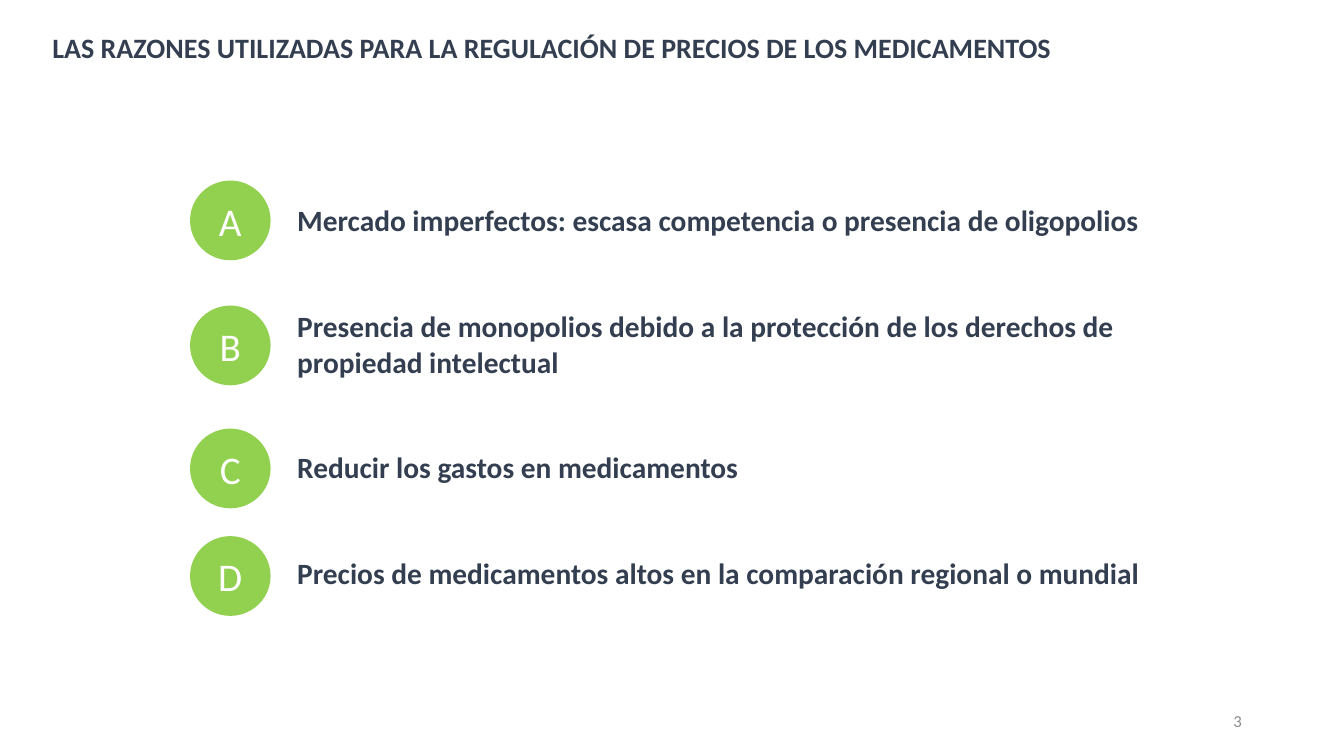
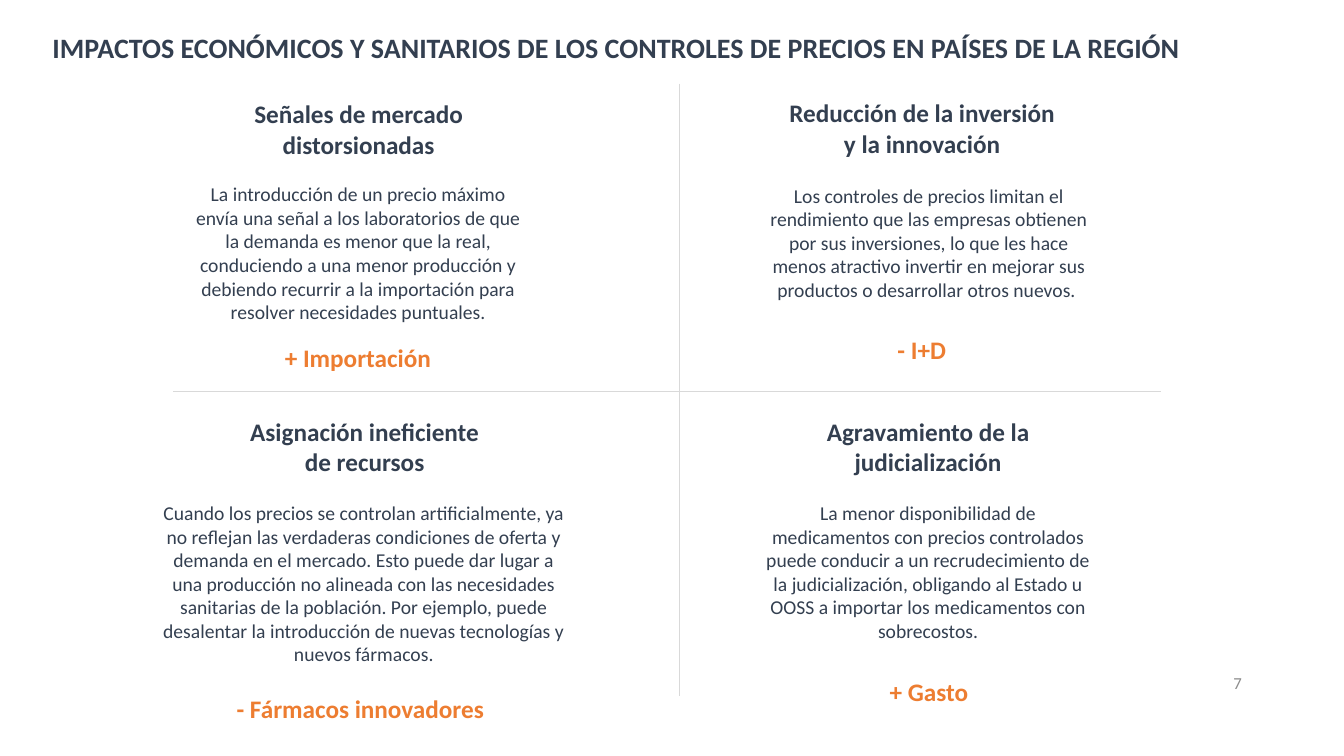
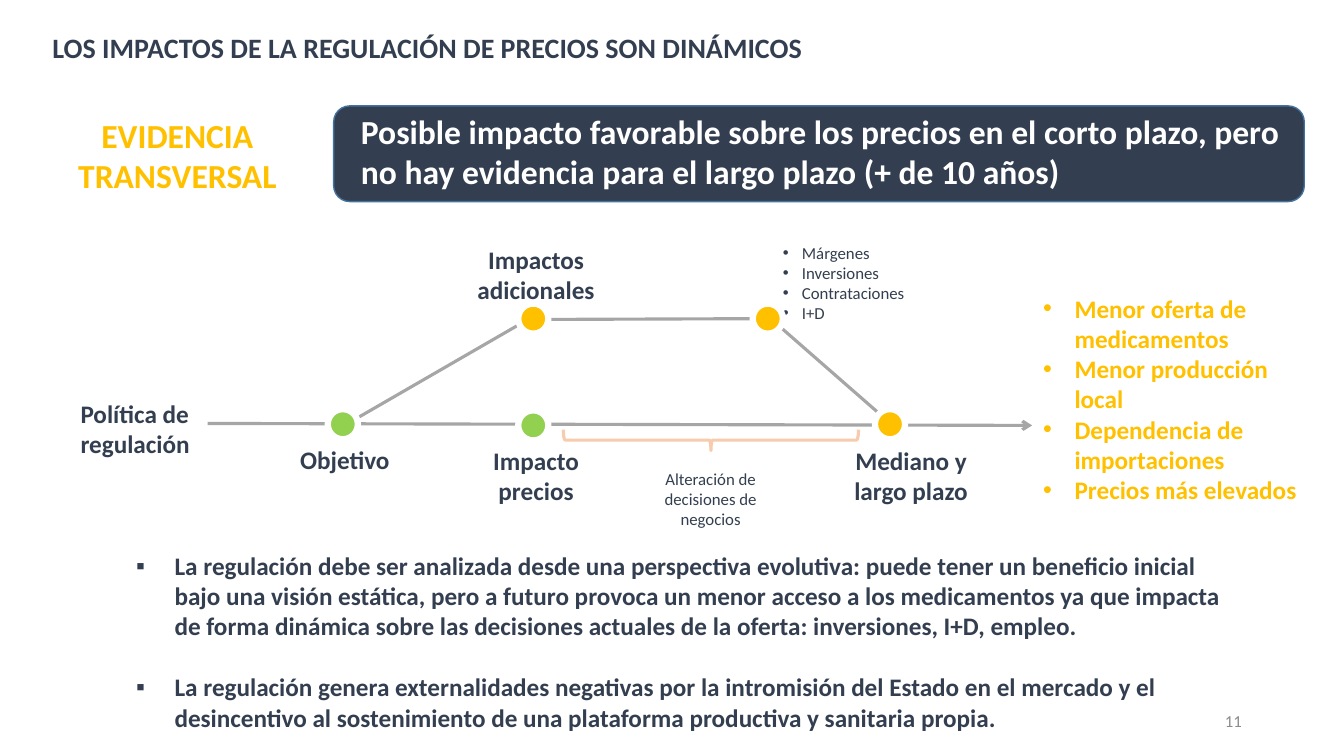
from lxml import etree
from pptx import Presentation
from pptx.dml.color import RGBColor
from pptx.enum import shapes, text
from pptx.oxml import ns
from pptx.util import Cm, Pt

NAVY = RGBColor(0x33, 0x3F, 0x50)
GREEN = RGBColor(0x92, 0xD0, 0x50)
AMBER = RGBColor(0xFF, 0xC0, 0x00)
ORANGE = RGBColor(0xED, 0x7D, 0x31)
PEACH = RGBColor(0xF8, 0xCB, 0xAD)
BLUE = RGBColor(0x43, 0x73, 0x9E)
GRAY = RGBColor(0xA6, 0xA6, 0xA6)
LIGHT_GRAY = RGBColor(0xD9, 0xD9, 0xD9)
NUMBER_GRAY = RGBColor(0x8C, 0x8C, 0x8C)
WHITE = RGBColor(0xFF, 0xFF, 0xFF)

FONT = "Calibri"
LEFT, CENTER, RIGHT = text.PP_ALIGN.LEFT, text.PP_ALIGN.CENTER, text.PP_ALIGN.RIGHT
TOP, MIDDLE = text.MSO_ANCHOR.TOP, text.MSO_ANCHOR.MIDDLE
DOT = 0.76


def set_bullet(paragraph, character, indent):
    properties = paragraph._p.get_or_add_pPr()
    properties.set("marL", str(Cm(indent)))
    properties.set("indent", str(-Cm(indent)))
    font = etree.SubElement(properties, ns.qn("a:buFont"))
    font.set("typeface", "Arial")
    bullet = etree.SubElement(properties, ns.qn("a:buChar"))
    bullet.set("char", character)


def write(shape, lines, size, color=NAVY, bold=False, align=LEFT, anchor=TOP,
          gap=0, bullet=None, indent=0):
    """Fill a shape with one paragraph per line; gap is the space between them."""
    frame = shape.text_frame
    frame.word_wrap = True
    frame.vertical_anchor = anchor
    for index, line in enumerate(lines):
        paragraph = frame.add_paragraph() if index else frame.paragraphs[0]
        paragraph.alignment = align
        if index and gap:
            paragraph.space_before = Pt(gap)
        if bullet:
            set_bullet(paragraph, bullet, indent)
        run = paragraph.add_run()
        run.text = line
        run.font.name = FONT
        run.font.size = Pt(size)
        run.font.bold = bold
        run.font.color.rgb = color


def add_text(slide, lines, left, top, width, height, size, **style):
    box = slide.shapes.add_textbox(Cm(left), Cm(top), Cm(width), Cm(height))
    write(box, lines, size, **style)


def add_centred(slide, line, centre, top, width, height, size, **style):
    """Add centred text around a horizontal centre."""
    add_text(slide, [line], centre - width / 2, top, width, height, size,
             align=CENTER, **style)


def add_shape(slide, kind, left, top, width, height, fill=None, line=None, weight=1):
    shape = slide.shapes.add_shape(kind, Cm(left), Cm(top), Cm(width), Cm(height))
    shape.shadow.inherit = False
    if fill is None:
        shape.fill.background()
    else:
        shape.fill.solid()
        shape.fill.fore_color.rgb = fill
    if line is None:
        shape.line.fill.background()
    else:
        shape.line.color.rgb = line
        shape.line.width = Pt(weight)
    return shape


def add_line(slide, start, end, color, weight, arrow=False):
    connector = slide.shapes.add_connector(
        shapes.MSO_CONNECTOR.STRAIGHT, *(Cm(value) for value in start + end))
    connector.line.color.rgb = color
    connector.line.width = Pt(weight)
    if arrow:
        tail = etree.SubElement(connector.line._get_or_add_ln(), ns.qn("a:tailEnd"))
        tail.set("type", "arrow")
    etree.SubElement(connector._element.spPr, ns.qn("a:effectLst"))


def add_slide(presentation, title, number, number_top=17.65):
    slide = presentation.slides.add_slide(presentation.slide_layouts[6])
    add_text(slide, [title], 1.07, 0.64, 29.87, 1.12, 20, bold=True)
    add_text(slide, [number], 23.93, number_top, 7.62, 1.02, 12,
             color=NUMBER_GRAY, align=RIGHT, anchor=MIDDLE)
    return slide


def build_reasons(presentation):
    slide = add_slide(
        presentation,
        "LAS RAZONES UTILIZADAS PARA LA REGULACIÓN DE PRECIOS DE LOS MEDICAMENTOS", "3")
    reasons = [
        "Mercado imperfectos: escasa competencia o presencia de oligopolios",
        "Presencia de monopolios debido a la protección de los derechos de propiedad intelectual",
        "Reducir los gastos en medicamentos",
        "Precios de medicamentos altos en la comparación regional o mundial",
    ]
    add_text(slide, reasons, 7.24, 4.98, 24, 10.13, 21, bold=True, gap=50.4)
    for letter, top in zip("ABCD", (4.55, 7.7, 10.8, 13.51)):
        circle = add_shape(slide, shapes.MSO_SHAPE.OVAL, 4.79, top, 2.03, 2.01, GREEN)
        write(circle, [letter], 28, color=WHITE, align=CENTER, anchor=MIDDLE)


def build_impacts(presentation):
    slide = add_slide(
        presentation,
        "IMPACTOS ECONÓMICOS Y SANITARIOS DE LOS CONTROLES DE PRECIOS EN PAÍSES DE LA REGIÓN",
        "7", number_top=16.69)
    # Each place is centre, top, width, height.
    headings = [
        ("Señales de mercado distorsionadas", 9.04, 2.36, 5.84, 1.8),
        ("Reducción de la inversión y la innovación", 23.24, 2.34, 7.52, 1.8),
        ("Asignación ineficiente de recursos", 9.19, 10.36, 6.99, 1.8),
        ("Agravamiento de la judicialización", 23.39, 10.36, 6.6, 1.8),
    ]
    explanations = [
        ("La introducción de un precio máximo envía una señal a los laboratorios de que "
         "la demanda es menor que la real, conduciendo a una menor producción y debiendo "
         "recurrir a la importación para resolver necesidades puntuales.",
         9.03, 4.47, 8.97, 3.84),
        ("Los controles de precios limitan el rendimiento que las empresas obtienen por "
         "sus inversiones, lo que les hace menos atractivo invertir en mejorar sus "
         "productos o desarrollar otros nuevos. ",
         23.41, 4.5, 8.97, 3.25),
        ("Cuando los precios se controlan artificialmente, ya no reflejan las verdaderas "
         "condiciones de oferta y demanda en el mercado. Esto puede dar lugar a una "
         "producción no alineada con las necesidades sanitarias de la población. Por "
         "ejemplo, puede desalentar la introducción de nuevas tecnologías y nuevos fármacos.",
         9.17, 12.5, 10.82, 4.44),
        ("La menor disponibilidad de medicamentos con precios controlados puede conducir "
         "a un recrudecimiento de la judicialización, obligando al Estado u OOSS a "
         "importar los medicamentos con sobrecostos.",
         23.39, 12.5, 8.74, 3.84),
    ]
    outcomes = [
        ("+ Importación", 9.02, 8.51, 7.5, 1.02),
        ("- I+D", 23.23, 8.31, 7.5, 1.02),
        ("- Fármacos innovadores", 9.08, 17.35, 7.5, 1.02),
        ("+ Gasto", 23.41, 16.92, 7.5, 1.02),
    ]
    for heading in headings:
        add_centred(slide, *heading, 18, bold=True)
    for explanation in explanations:
        add_centred(slide, *explanation, 14)
    for outcome in outcomes:
        add_centred(slide, *outcome, 18, color=ORANGE, bold=True)
    add_line(slide, (17.12, 2.11), (17.12, 17.55), LIGHT_GRAY, 0.5)
    add_line(slide, (4.37, 9.86), (29.26, 9.86), LIGHT_GRAY, 0.5)


def add_key_message(slide):
    banner = add_shape(slide, shapes.MSO_SHAPE.ROUNDED_RECTANGLE,
                       8.41, 2.67, 24.46, 2.41, NAVY, BLUE)
    frame = banner.text_frame
    frame.margin_left, frame.margin_right = Cm(0.57), Cm(0.1)
    frame.margin_top = frame.margin_bottom = 0
    write(banner, ["Posible impacto favorable sobre los precios en el corto plazo, pero "
                   "no hay evidencia para el largo plazo (+ de 10 años)"],
          24, color=WHITE, bold=True)
    add_centred(slide, "EVIDENCIA TRANSVERSAL", 4.47, 2.77, 7.06, 2.31, 24,
                color=AMBER, bold=True)


def add_timeline(slide):
    for start, end in [((19.48, 8.08), (22.35, 10.59)),
                       ((13.51, 8.05), (19, 8.03)),
                       ((8.94, 10.57), (13.08, 8.18))]:
        add_line(slide, start, end, GRAY, 2.25)
    add_line(slide, (5.23, 10.67), (26.01, 10.72), GRAY, 2.25, arrow=True)

    add_text(slide, ["Política de regulación"], 1.78, 9.91, 4.22, 1.8, 18, bold=True)
    for label, centre, top in [("Objetivo", 8.69, 11.07),
                               ("Impacto precios", 13.51, 11.1),
                               ("Impactos adicionales", 13.51, 6.02),
                               ("Mediano y largo plazo", 22.96, 11.1)]:
        add_centred(slide, label, centre, top, 3.8, 1.8, 18, bold=True)
    add_centred(slide, "Alteración de decisiones de negocios", 17.91, 11.68, 3.61, 1.8, 12)
    add_text(slide, ["Márgenes", "Inversiones", "Contrataciones", "I+D"],
             19.48, 5.99, 4, 2.31, 12, bullet="•", indent=0.48)

    for left, top, color in [(8.26, 10.31, GREEN), (13.06, 10.34, GREEN),
                             (13.06, 7.65, AMBER), (18.97, 7.65, AMBER),
                             (22.05, 10.31, AMBER)]:
        add_shape(slide, shapes.MSO_SHAPE.OVAL, left, top, DOT, DOT, color, WHITE, 4.5)
    brace = add_shape(slide, shapes.MSO_SHAPE.RIGHT_BRACE, 17.65, 7.37, 0.53, 7.44,
                      line=PEACH, weight=2.25)
    brace.rotation = 90


def build_dynamics(presentation):
    slide = add_slide(
        presentation, "LOS IMPACTOS DE LA REGULACIÓN DE PRECIOS SON DINÁMICOS", "11")
    add_key_message(slide)
    add_timeline(slide)
    add_text(slide, ["Menor oferta de medicamentos", "Menor producción local",
                     "Dependencia de importaciones", "Precios más elevados"],
             26.04, 7.26, 7.47, 5.64, 18, color=AMBER, bold=True, bullet="•", indent=0.79)
    add_text(slide, [
        "La regulación debe ser analizada desde una perspectiva evolutiva: puede tener un "
        "beneficio inicial bajo una visión estática, pero a futuro provoca un menor acceso "
        "a los medicamentos ya que impacta de forma dinámica sobre las decisiones actuales "
        "de la oferta: inversiones, I+D, empleo.",
        "La regulación genera externalidades negativas por la intromisión del Estado en el "
        "mercado y el desincentivo al sostenimiento de una plataforma productiva y "
        "sanitaria propia.",
    ], 3.18, 13.74, 27.97, 4.88, 18, bold=True, gap=22, bullet="▪", indent=0.97)


def main():
    presentation = Presentation()
    presentation.slide_width = Cm(33.87)
    presentation.slide_height = Cm(19.05)
    build_reasons(presentation)
    build_impacts(presentation)
    build_dynamics(presentation)
    presentation.save("out.pptx")


if __name__ == "__main__":
    main()
